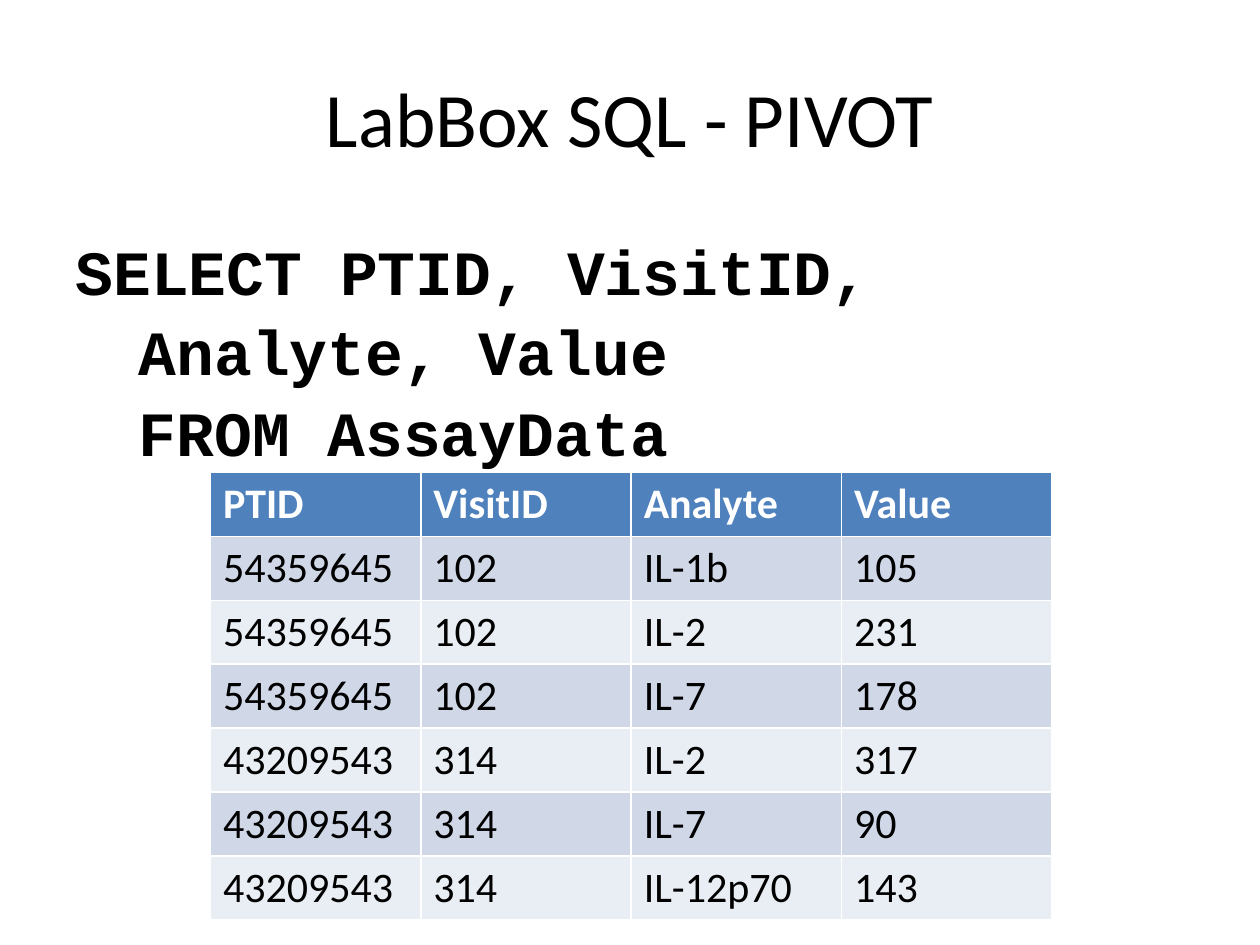
import pptx
import pptx.util
import pptx.dml.color
import pptx.enum.text
import pptx.oxml

Inches, Pt = pptx.util.Inches, pptx.util.Pt

# Content
TITLE = "LabBox SQL - PIVOT"
QUERY = ["SELECT PTID, VisitID,", "\tAnalyte, Value", "\tFROM AssayData"]
ROWS = [
    ("PTID", "VisitID", "Analyte", "Value"),
    ("54359645", "102", "IL-1b", "105"),
    ("54359645", "102", "IL-2", "231"),
    ("54359645", "102", "IL-7", "178"),
    ("43209543", "314", "IL-2", "317"),
    ("43209543", "314", "IL-7", "90"),
    ("43209543", "314", "IL-12p70", "143"),
]

# Formats
COLORS = {"text": "000000", "head": "4F81BD", "head_text": "FFFFFF",
          "odd": "D0D8E8", "even": "E9EDF4"}
TITLE_FONT = {"name": "Calibri", "size": Pt(44)}
QUERY_FONT = {"name": "Courier New", "size": Pt(36), "bold": True}
CELL_FONT = {"name": "Calibri", "size": Pt(24)}
COL_W, ROW_H = 1.67, 0.5


def rgb(key):
    return pptx.dml.color.RGBColor.from_string(COLORS[key])


def add_text(p, text, font, color="text"):
    r = p.add_run()
    r.text = text
    for name, value in font.items():
        setattr(r.font, name, value)
    r.font.color.rgb = rgb(color)


def place(sp, left, top, width, height):
    sp.left, sp.top = Inches(left), Inches(top)
    sp.width, sp.height = Inches(width), Inches(height)


prs = pptx.Presentation()
prs.slide_width, prs.slide_height = Inches(10), Inches(7.5)
s = prs.slides.add_slide(prs.slide_layouts[1])
title, body = s.placeholders

# Title
place(title, 0.5, 0.3, 9, 1.25)
p = title.text_frame.paragraphs[0]
p.alignment = pptx.enum.text.PP_ALIGN.CENTER
add_text(p, TITLE, TITLE_FONT)

# Query: one paragraph without bullet, broken into lines
place(body, 0.5, 1.75, 9, 4.95)
p = body.text_frame.paragraphs[0]
p.line_spacing, p.space_before = 1.07, Pt(5)
pPr = p._p.get_or_add_pPr()
pPr.set("marL", "0")
pPr.set("indent", "0")
pPr.append(pptx.oxml.parse_xml(
    '<a:buNone xmlns:a="http://schemas.openxmlformats.org/drawingml/2006/main"/>'))
for i, line in enumerate(QUERY):
    if i:
        p.add_line_break()
    add_text(p, line, QUERY_FONT)

# Result table
n_rows, n_cols = len(ROWS), len(ROWS[0])
table = s.shapes.add_table(n_rows, n_cols, Inches(1.67), Inches(3.75),
                           Inches(COL_W * n_cols), Inches(ROW_H * n_rows)).table
for i, row in enumerate(ROWS):
    fill = "head" if i == 0 else "odd" if i % 2 else "even"
    for j, text in enumerate(row):
        cell = table.cell(i, j)
        cell.fill.solid()
        cell.fill.fore_color.rgb = rgb(fill)
        add_text(cell.text_frame.paragraphs[0], text, {**CELL_FONT, "bold": i == 0},
                 "text" if i else "head_text")

prs.save("out.pptx")
